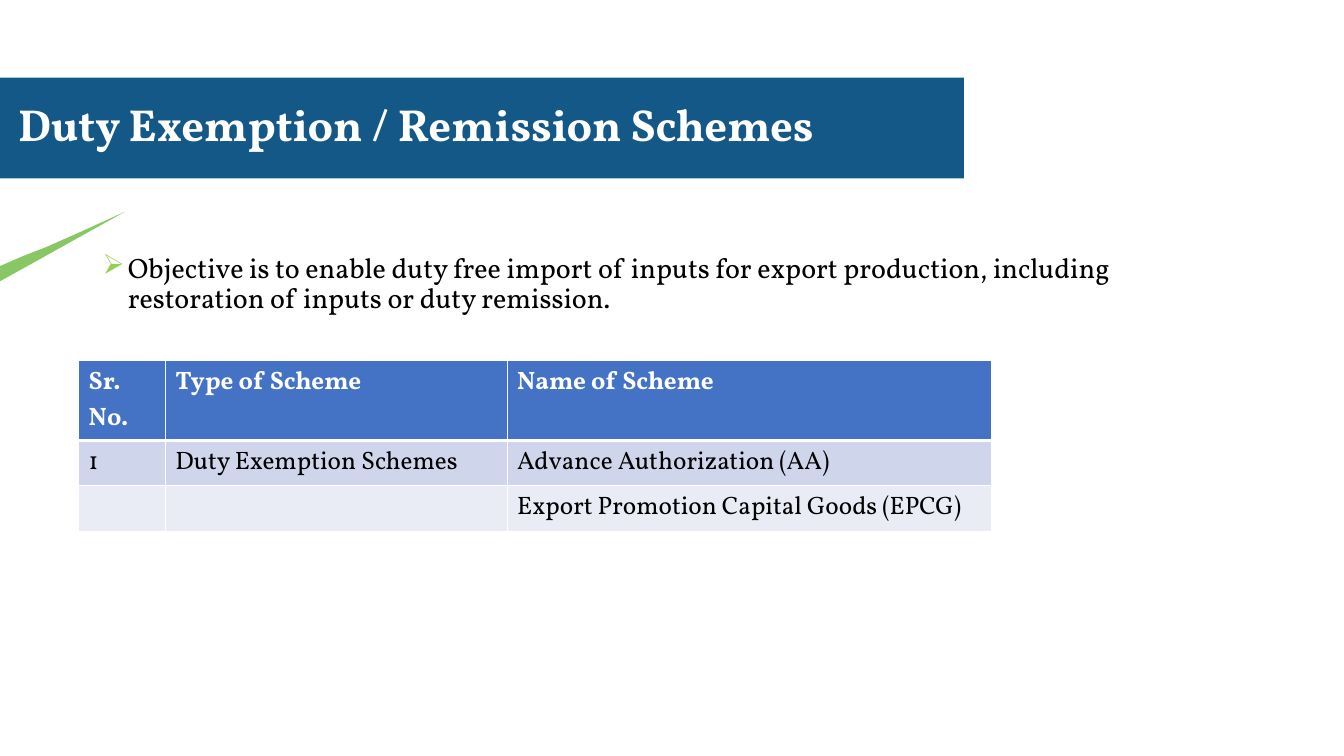
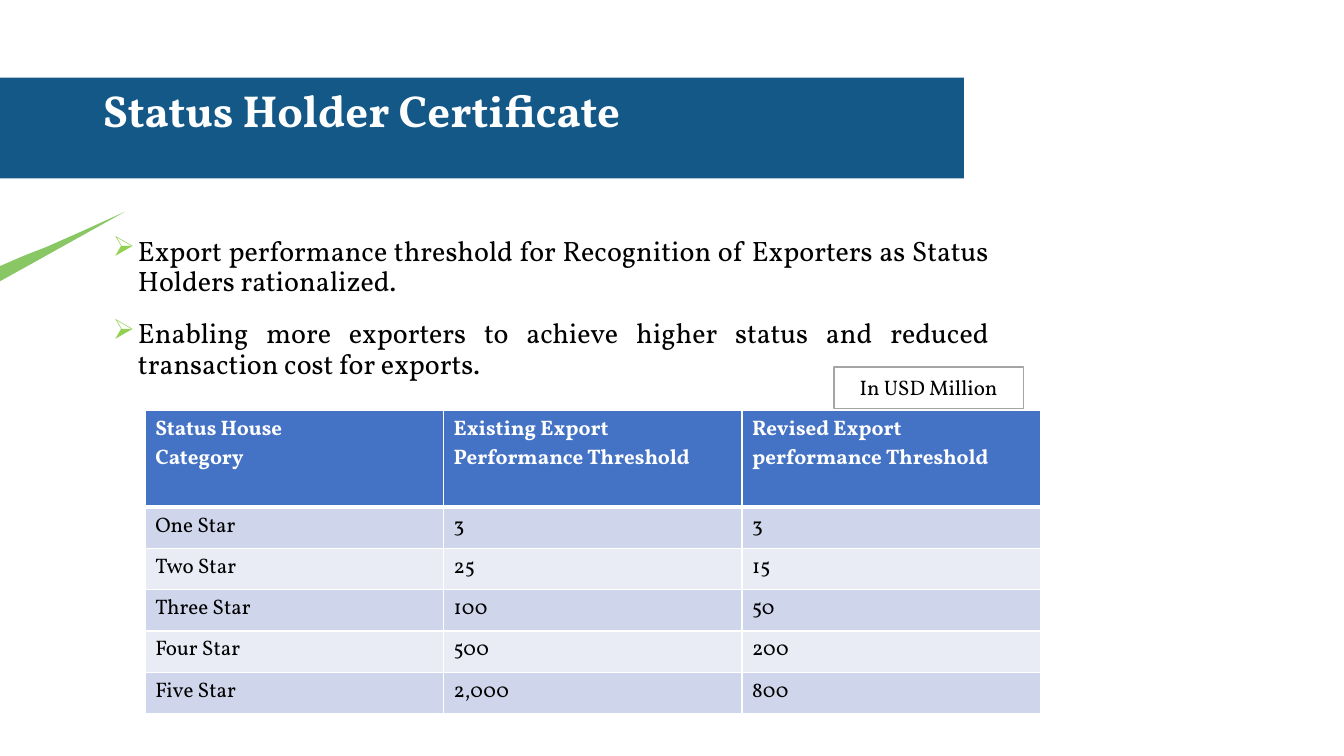
from dataclasses import dataclass

from lxml import etree
from pptx import Presentation
from pptx.dml.color import RGBColor
from pptx.enum.shapes import MSO_SHAPE
from pptx.enum.text import MSO_ANCHOR, MSO_AUTO_SIZE, PP_ALIGN
from pptx.oxml.ns import qn
from pptx.util import Inches, Pt


@dataclass(frozen=True)
class Theme:
    font: str = "Vollkorn"
    band: str = "135887"
    wedge: str = "89C765"
    bullet: str = "92D050"
    header: str = "4472C4"
    odd_row: str = "CFD5EA"
    even_row: str = "E9EBF5"
    outline: str = "A5A5A5"
    white: str = "FFFFFF"
    black: str = "000000"
    title_size: int = 32
    body_size: int = 20
    table_size: int = 18
    small_size: int = 15


THEME = Theme()
WEDGE_POINTS = [(1.24, 0), (1.13, 0.05), (0.8, 0.2), (0.46, 0.35), (0.23, 0.44),
                (0, 0.54), (0, 0.69), (0.29, 0.53)]


def add_bullet(paragraph):
    """Hang the paragraph from a coloured arrow bullet."""
    properties = paragraph._p.get_or_add_pPr()
    properties.set("marL", str(Inches(0.25)))
    properties.set("indent", str(-Inches(0.25)))
    colour = etree.SubElement(properties, qn("a:buClr"))
    etree.SubElement(colour, qn("a:srgbClr"), val=THEME.bullet)
    etree.SubElement(properties, qn("a:buChar"), char="➢")


def write_text(frame, text, *, size, color=THEME.black, bold=False, align=PP_ALIGN.LEFT,
               anchor=MSO_ANCHOR.TOP, line_spacing=None, before=0, after=0, bullet=False):
    """Write one paragraph for each line of text."""
    frame.word_wrap = True
    frame.vertical_anchor = anchor
    for index, line in enumerate(text.split("\n")):
        paragraph = frame.add_paragraph() if index else frame.paragraphs[0]
        if bullet:
            add_bullet(paragraph)
        paragraph.alignment = align
        if line_spacing:
            paragraph.line_spacing = line_spacing
        paragraph.space_before = Pt(before if index else 0)
        paragraph.space_after = Pt(after)
        run = paragraph.add_run()
        run.text = line
        run.font.name = THEME.font
        run.font.size = Pt(size)
        run.font.bold = bold
        run.font.color.rgb = RGBColor.from_string(color)


def paint(shape, fill, line=None):
    shape.shadow.inherit = False
    shape.fill.solid()
    shape.fill.fore_color.rgb = RGBColor.from_string(fill)
    if line:
        shape.line.color.rgb = RGBColor.from_string(line)
        shape.line.width = Pt(1)
    else:
        shape.line.fill.background()


def decorate_layout(slide):
    """Draw the wedge and title band, then move them to the shared layout."""
    left, top = 0, 2.1
    points = [(Inches(left + x), Inches(top + y)) for x, y in WEDGE_POINTS]
    builder = slide.shapes.build_freeform(*points[0])
    builder.add_line_segments(points[1:], close=True)
    wedge = builder.convert_to_shape()
    paint(wedge, THEME.wedge)
    band = slide.shapes.add_shape(MSO_SHAPE.RECTANGLE, 0, Inches(0.77), Inches(9.56), Inches(1))
    paint(band, THEME.band)
    for number, shape in enumerate((wedge, band), start=101):
        shape.element.nvSpPr.cNvPr.id = number
        slide.slide_layout.shapes.element.append(shape.element)


def place_title(slide, text, left, top):
    title = slide.shapes.title
    title.left, title.top = Inches(left), Inches(top)
    title.width, title.height = Inches(11.5), Inches(1.45)
    title.text_frame.auto_size = MSO_AUTO_SIZE.NONE
    write_text(title.text_frame, text, size=THEME.title_size, color=THEME.white, bold=True,
               anchor=MSO_ANCHOR.MIDDLE, line_spacing=0.9)


def add_bullets(slide, text, box, align=PP_ALIGN.LEFT):
    body = slide.shapes.add_textbox(*map(Inches, box))
    write_text(body.text_frame, text, size=THEME.body_size, align=align, line_spacing=0.9,
               before=10, after=6, bullet=True)


def add_borders(cell, top, bottom):
    """Give a cell white edges; top and bottom are widths in points."""
    properties = cell._tc.get_or_add_tcPr()
    for side, width in (("L", 1), ("R", 1), ("T", top), ("B", bottom)):
        line = etree.SubElement(properties, qn(f"a:ln{side}"), w=str(Pt(width)))
        fill = etree.SubElement(line, qn("a:solidFill"))
        etree.SubElement(fill, qn("a:srgbClr"), val=THEME.white)


def add_scheme_table(slide, rows, left, top, widths, header_height, row_height, size):
    heights = [header_height] + [row_height] * (len(rows) - 1)
    frame = slide.shapes.add_table(len(rows), len(widths), Inches(left), Inches(top),
                                   Inches(sum(widths)), Inches(sum(heights)))
    table = frame.table
    for column, width in zip(table.columns, widths):
        column.width = Inches(width)
    for row_index, values in enumerate(rows):
        table.rows[row_index].height = Inches(heights[row_index])
        is_header = row_index == 0
        stripe = THEME.odd_row if row_index % 2 else THEME.even_row
        for column_index, value in enumerate(values):
            cell = table.cell(row_index, column_index)
            # The rule under the header is thicker than the others
            add_borders(cell, top=3 if row_index == 1 else 1, bottom=3 if is_header else 1)
            cell.fill.solid()
            cell.fill.fore_color.rgb = RGBColor.from_string(THEME.header if is_header else stripe)
            if value:
                write_text(cell.text_frame, value, size=size, bold=is_header,
                           color=THEME.white if is_header else THEME.black)


def add_unit_label(slide, text, box):
    label = slide.shapes.add_shape(MSO_SHAPE.RECTANGLE, *map(Inches, box))
    paint(label, THEME.white, THEME.outline)
    write_text(label.text_frame, text, size=THEME.small_size, align=PP_ALIGN.CENTER,
               anchor=MSO_ANCHOR.MIDDLE)


def build_duty_slide(slide):
    place_title(slide, "Duty Exemption / Remission Schemes", 0.08, 0.53)
    add_bullets(slide, "Objective is to enable duty free import of inputs for export production, "
                "including restoration of inputs or duty remission.", (0.92, 2.47, 10.24, 0.8))
    rows = [
        ("Sr. No.", "Type of Scheme", "Name of Scheme"),
        ("1", "Duty Exemption Schemes", "Advance Authorization (AA)"),
        ("", "", "Export Promotion Capital Goods (EPCG)"),
    ]
    add_scheme_table(slide, rows, 0.78, 3.58, (0.86, 3.39, 4.81), 0.79, 0.45, THEME.table_size)


def build_status_slide(slide):
    place_title(slide, "Status Holder Certificate", 0.92, 0.4)
    add_bullets(slide, "Export performance threshold for Recognition of Exporters as Status "
                "Holders rationalized.\nEnabling more exporters to achieve higher status and "
                "reduced transaction cost for exports.", (1.02, 2.3, 8.89, 1.75),
                align=PP_ALIGN.JUSTIFY)
    rows = [
        ("Status House\nCategory", "Existing Export\nPerformance Threshold",
         "Revised Export\nperformance Threshold"),
        ("One Star", "3", "3"),
        ("Two Star", "25", "15"),
        ("Three Star", "100", "50"),
        ("Four Star", "500", "200"),
        ("Five Star", "2,000", "800"),
    ]
    add_scheme_table(slide, rows, 1.44, 4.07, (2.96,) * 3, 0.96, 0.41, THEME.small_size)
    add_unit_label(slide, "In USD Million", (8.27, 3.64, 1.88, 0.41))


def main():
    presentation = Presentation()
    presentation.slide_width, presentation.slide_height = Inches(13.33), Inches(7.5)
    title_only = presentation.slide_layouts[5]
    for index, build in enumerate((build_duty_slide, build_status_slide)):
        slide = presentation.slides.add_slide(title_only)
        if index == 0:
            decorate_layout(slide)
        build(slide)
    presentation.save("out.pptx")


if __name__ == "__main__":
    main()
